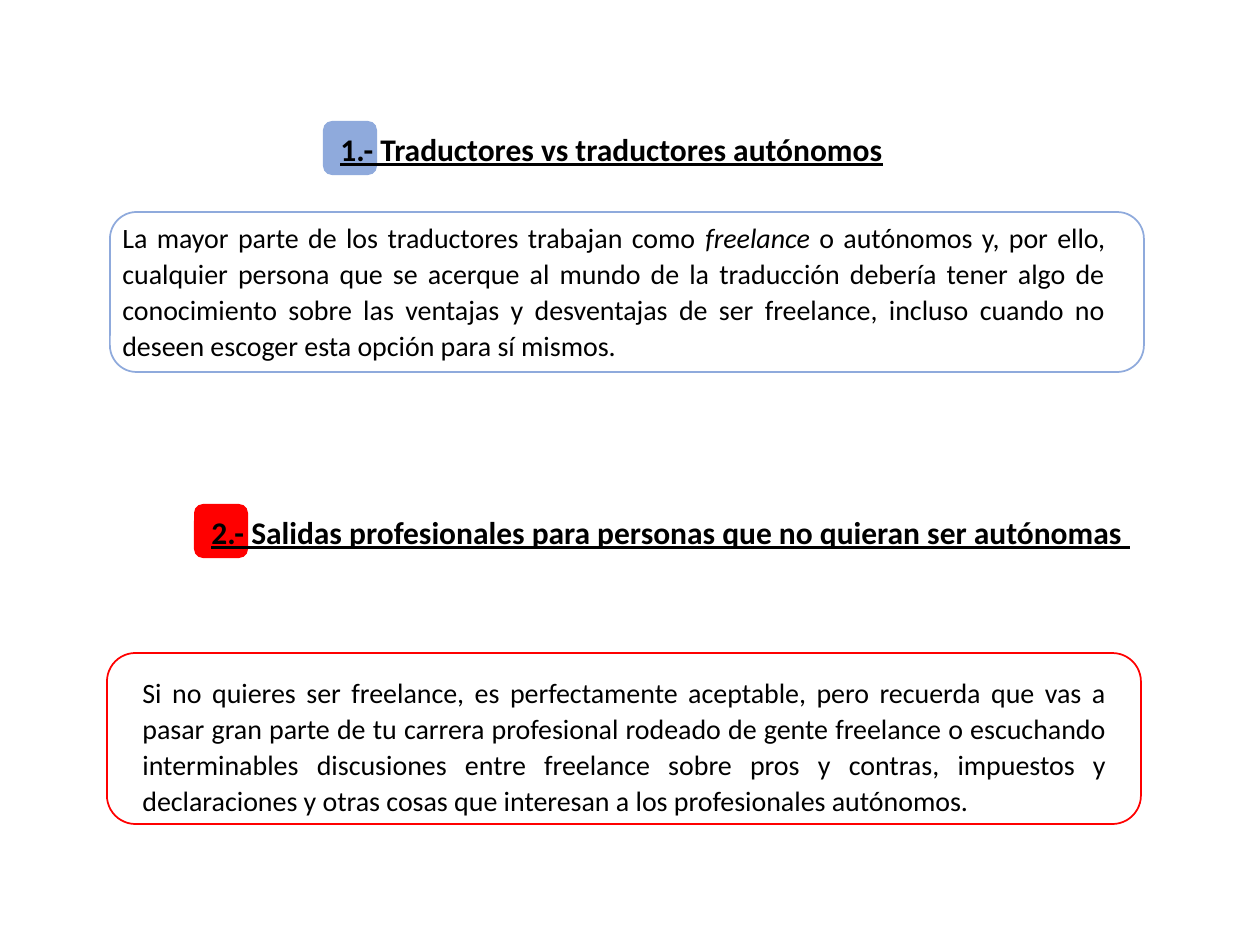
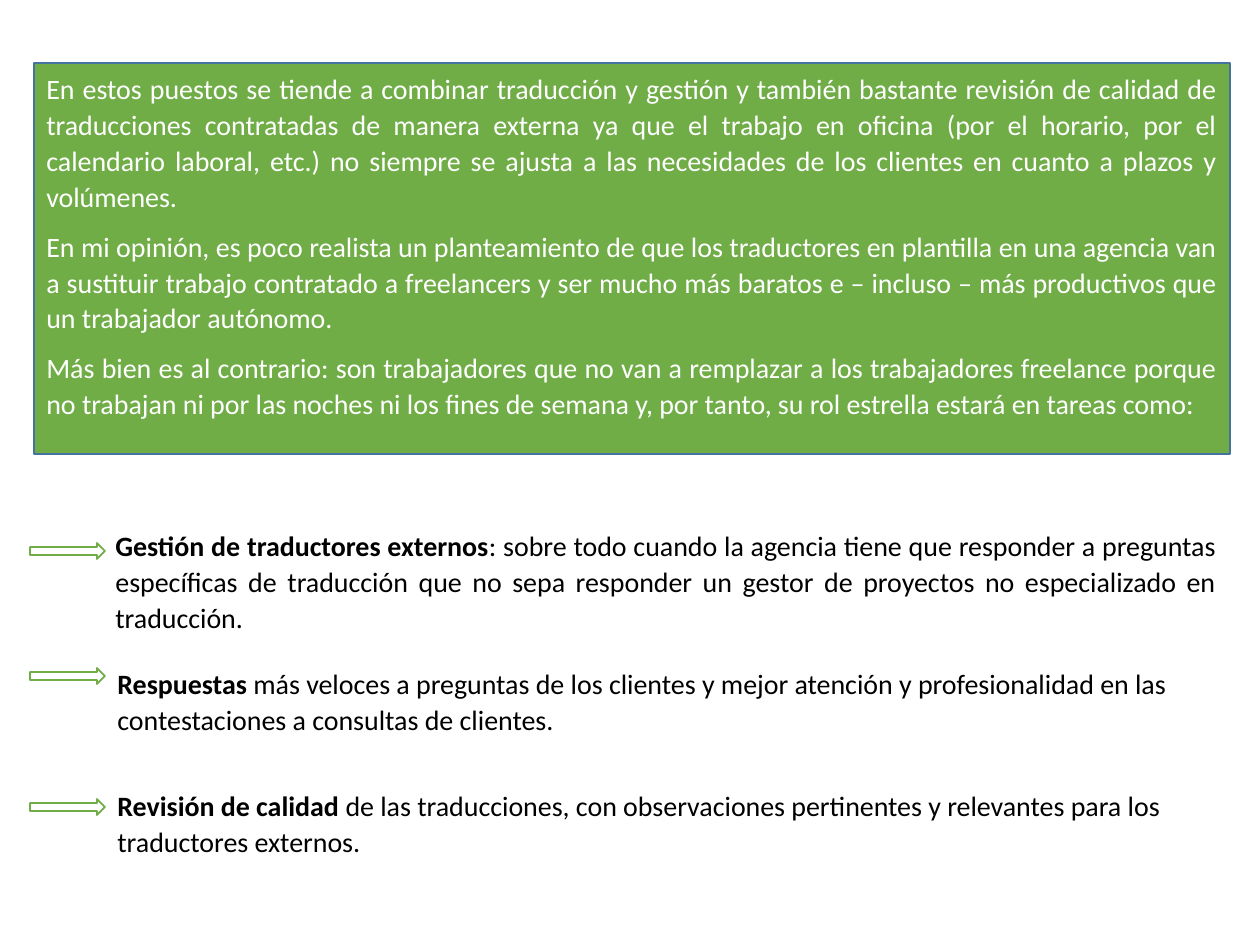
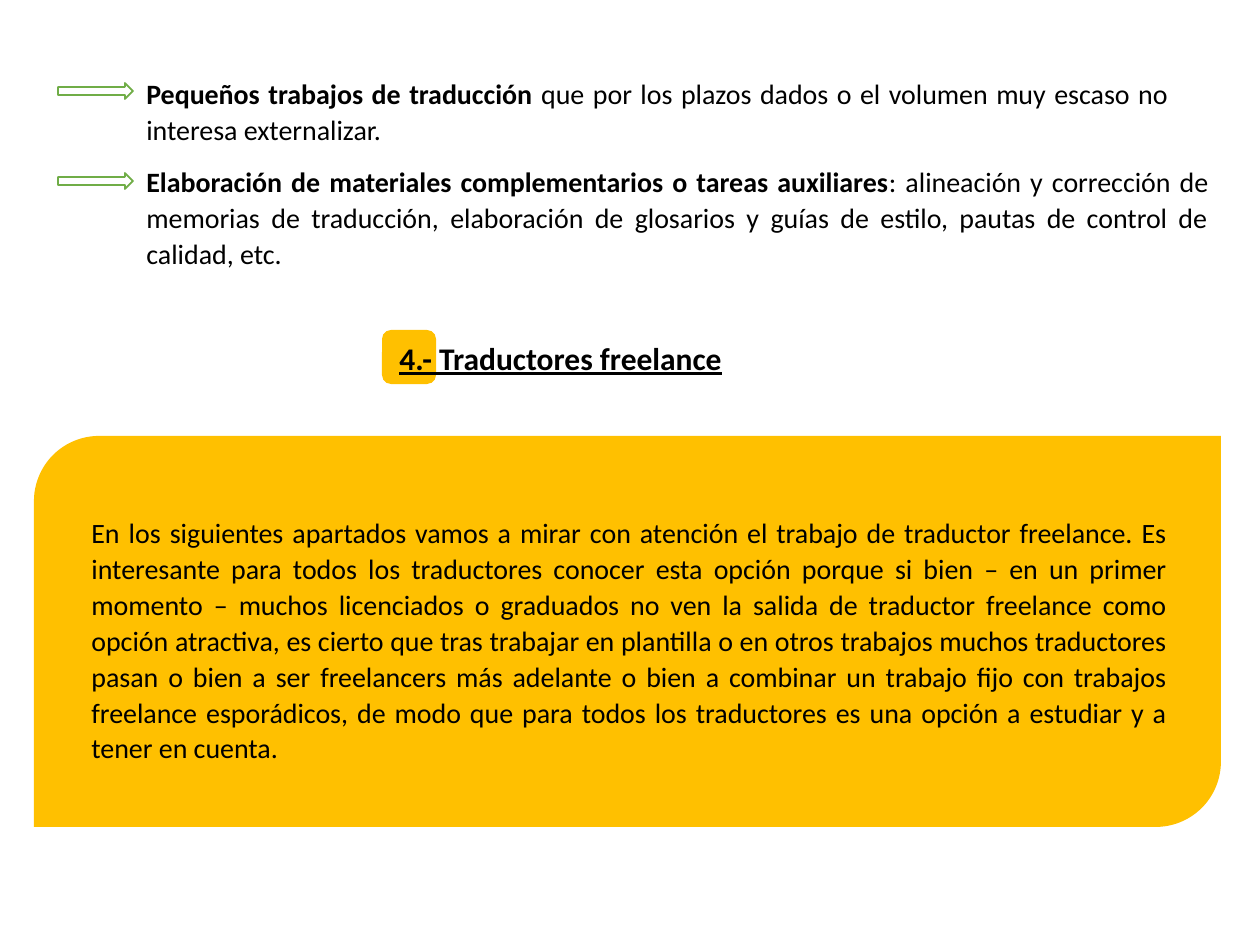
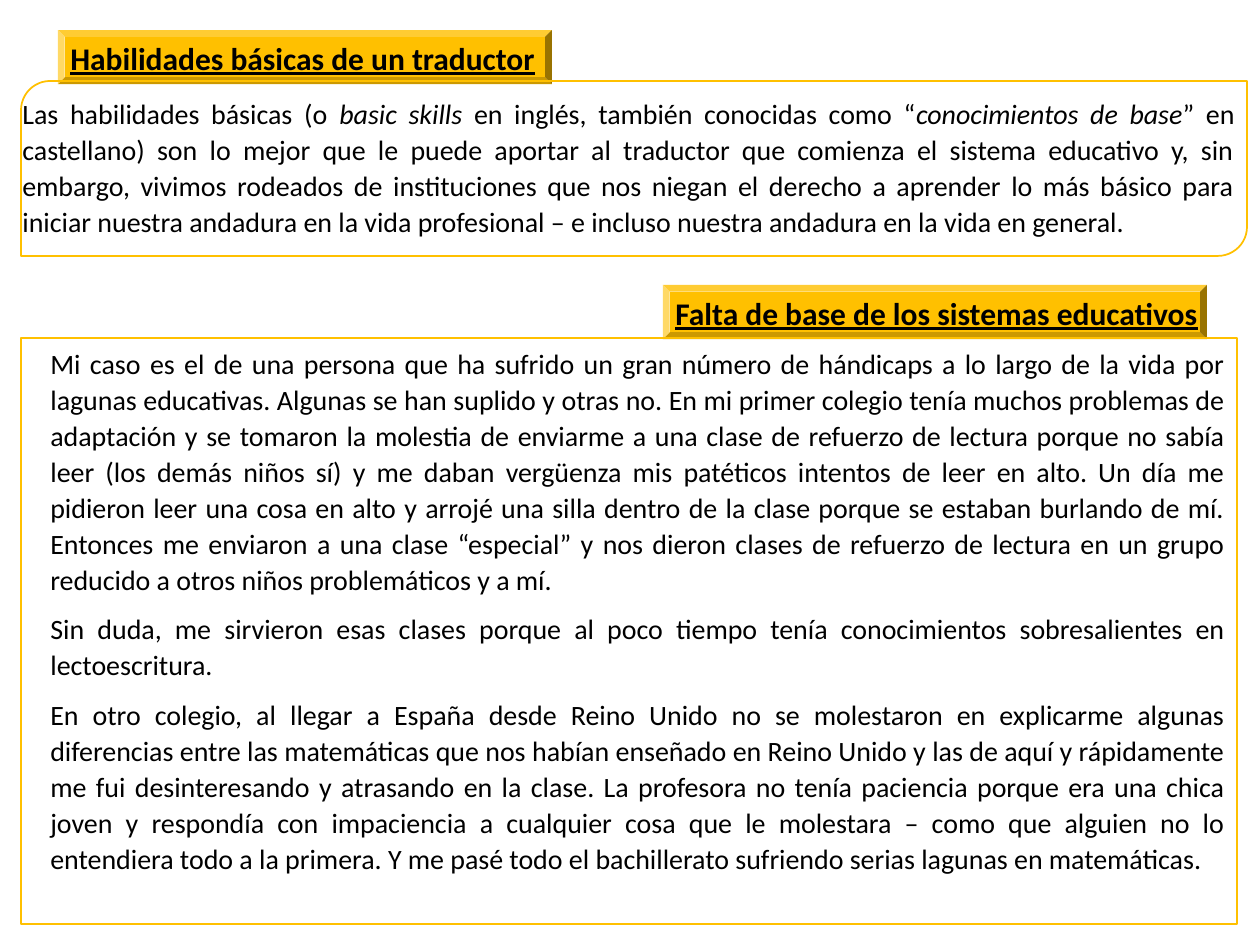
from dataclasses import dataclass

from pptx import Presentation
from pptx.dml.color import RGBColor
from pptx.enum import shapes, text
from pptx.util import Emu, Pt

PX = 914400 / 126
KINDS = shapes.MSO_SHAPE
ALIGN = text.PP_ALIGN


@dataclass(frozen=True)
class Theme:
    font: str = "Calibri"
    title_size: int = 18
    body_size: int = 16
    line_width: int = 1
    line_spacing: float = 1.07
    space_after: int = 8
    ink: str = "000000"
    white: str = "FFFFFF"
    red: str = "FF0000"
    blue: str = "8FAADC"
    green: str = "70AD47"
    edge: str = "43739E"
    gold: str = "FFC000"


T = Theme()
SLIDE_W, SLIDE_H = 1260, 945
BAR_H = 54
ARROW_W, ARROW_H = 75, 16

FREELANCE_MAJORITY = [[
    ("La mayor parte de los traductores trabajan como ", ""),
    ("freelance", "i"),
    (" o autónomos y, por ello, cualquier persona que se acerque al mundo de la traducción "
     "debería tener algo de conocimiento sobre las ventajas y desventajas de ser freelance, "
     "incluso cuando no deseen escoger esta opción para sí mismos.", ""),
]]
NOT_FREELANCE = [
    "Si no quieres ser freelance, es perfectamente aceptable, pero recuerda que vas a pasar "
    "gran parte de tu carrera profesional rodeado de gente freelance o escuchando "
    "interminables discusiones entre freelance sobre pros y contras, impuestos y "
    "declaraciones y otras cosas que interesan a los profesionales autónomos.",
]
AGENCY_ROLES = [
    "En estos puestos se tiende a combinar traducción y gestión y también bastante revisión "
    "de calidad de traducciones contratadas de manera externa ya que el trabajo en oficina "
    "(por el horario, por el calendario laboral, etc.) no siempre se ajusta a las necesidades "
    "de los clientes en cuanto a plazos y volúmenes.",
    "En mi opinión, es poco realista un planteamiento de que los traductores en plantilla en "
    "una agencia van a sustituir trabajo contratado a freelancers y ser mucho más baratos e "
    "– incluso – más productivos que un trabajador autónomo.",
    "Más bien es al contrario: son trabajadores que no van a remplazar a los trabajadores "
    "freelance porque no trabajan ni por las noches ni los fines de semana y, por tanto, su "
    "rol estrella estará en tareas como:",
]
MANAGEMENT = [[
    ("Gestión de traductores externos", "b"),
    (": sobre todo cuando la agencia tiene que responder a preguntas específicas de "
     "traducción que no sepa responder un gestor de proyectos no especializado en "
     "traducción.", ""),
]]
ANSWERS = [[
    ("Respuestas ", "b"),
    ("más veloces a preguntas de los clientes y mejor atención y profesionalidad en las "
     "contestaciones a consultas de clientes.", ""),
]]
REVISION = [[
    ("Revisión de calidad", "b"),
    (" de las traducciones, con observaciones pertinentes y relevantes para los traductores "
     "externos.", ""),
]]
SMALL_JOBS = [[
    ("Pequeños trabajos de traducción", "b"),
    (" que por los plazos dados o el volumen muy escaso no interesa externalizar.", ""),
]]
MATERIALS = [[
    ("Elaboración de materiales complementarios o tareas auxiliares", "b"),
    (": alineación y corrección de memorias de traducción, elaboración de glosarios y guías "
     "de estilo, pautas de control de calidad, etc.", ""),
]]
FREELANCE_OPTION = [
    "En los siguientes apartados vamos a mirar con atención el trabajo de traductor "
    "freelance. Es interesante para todos los traductores conocer esta opción porque si bien "
    "– en un primer momento – muchos licenciados o graduados no ven la salida de traductor "
    "freelance como opción atractiva, es cierto que tras trabajar en plantilla o en otros "
    "trabajos muchos traductores pasan o bien a ser freelancers más adelante o bien a "
    "combinar un trabajo fijo con trabajos freelance esporádicos, de modo que para todos los "
    "traductores es una opción a estudiar y a tener en cuenta.",
]
BASIC_SKILLS = [[
    ("Las habilidades básicas (o ", ""),
    ("basic skills", "i"),
    (" en inglés, también conocidas como “", ""),
    ("conocimientos de base", "i"),
    ("” en castellano) son lo mejor que le puede aportar al traductor que comienza el sistema "
     "educativo y, sin embargo, vivimos rodeados de instituciones que nos niegan el derecho a "
     "aprender lo más básico para iniciar nuestra andadura en la vida profesional – e incluso "
     "nuestra andadura en la vida en general.", ""),
]]
SCHOOL_STORY = [
    "Mi caso es el de una persona que ha sufrido un gran número de hándicaps a lo largo de la "
    "vida por lagunas educativas. Algunas se han suplido y otras no. En mi primer colegio "
    "tenía muchos problemas de adaptación y se tomaron la molestia de enviarme a una clase de "
    "refuerzo de lectura porque no sabía leer (los demás niños sí) y me daban vergüenza mis "
    "patéticos intentos de leer en alto. Un día me pidieron leer una cosa en alto y arrojé "
    "una silla dentro de la clase porque se estaban burlando de mí. Entonces me enviaron a "
    "una clase “especial” y nos dieron clases de refuerzo de lectura en un grupo reducido a "
    "otros niños problemáticos y a mí.",
    "Sin duda, me sirvieron esas clases porque al poco tiempo tenía conocimientos "
    "sobresalientes en lectoescritura.",
    "En otro colegio, al llegar a España desde Reino Unido no se molestaron en explicarme "
    "algunas diferencias entre las matemáticas que nos habían enseñado en Reino Unido y las "
    "de aquí y rápidamente me fui desinteresando y atrasando en la clase. La profesora no "
    "tenía paciencia porque era una chica joven y respondía con impaciencia a cualquier cosa "
    "que le molestara – como que alguien no lo entendiera todo a la primera. Y me pasé todo "
    "el bachillerato sufriendo serias lagunas en matemáticas.",
]


def box(s, kind, at, fill=None, line=None):
    sp = s.shapes.add_shape(kind, *(Emu(round(v * PX)) for v in at))
    sp.shadow.inherit = False
    if fill:
        sp.fill.solid()
        sp.fill.fore_color.rgb = RGBColor.from_string(fill)
    else:
        sp.fill.background()
    if line:
        sp.line.color.rgb = RGBColor.from_string(line)
        sp.line.width = Pt(T.line_width)
    else:
        sp.line.fill.background()


def write(s, paragraphs, at, size=T.body_size, color=T.ink, align=ALIGN.JUSTIFY,
          wrap=True, heading=False):
    tf = s.shapes.add_textbox(*(Emu(round(v * PX)) for v in at)).text_frame
    tf.word_wrap = wrap
    tf.auto_size = text.MSO_AUTO_SIZE.SHAPE_TO_FIT_TEXT
    for i, runs in enumerate(paragraphs):
        p = tf.add_paragraph() if i else tf.paragraphs[0]
        p.alignment = align
        p.line_spacing = T.line_spacing
        p.space_after = Pt(T.space_after)
        p.font.name = T.font
        p.font.size = Pt(size)
        p.font.color.rgb = RGBColor.from_string(color)
        if heading:
            p.font.bold = p.font.underline = True
        for words, style in [(runs, "")] if isinstance(runs, str) else runs:
            r = p.add_run()
            r.text = words
            if style == "b":
                r.font.bold = True
            elif style == "i":
                r.font.italic = True


def title(s, words, x, y, w, wrap=False):
    write(s, [words], (x, y, w, BAR_H), T.title_size, align=ALIGN.LEFT, wrap=wrap, heading=True)


def numbered_title(s, words, x, y, w, color, wrap=False):
    box(s, KINDS.ROUNDED_RECTANGLE, (x, y, BAR_H, BAR_H), color)
    title(s, words, x + 5, y, w, wrap)


def bevel_title(s, words, x, y, bevel_w, text_w):
    box(s, KINDS.BEVEL, (x, y, bevel_w, BAR_H), T.gold)
    title(s, words, x, y, text_w)


def arrow_item(s, paragraphs, arrow_at, at, align=ALIGN.JUSTIFY):
    box(s, KINDS.RIGHT_ARROW, (*arrow_at, ARROW_W, ARROW_H), line=T.green)
    write(s, paragraphs, at, align=align)


def translators(s):
    numbered_title(s, "2.- Salidas profesionales para personas que no quieran ser autónomas ",
                   194, 504, 945, T.red, wrap=True)
    numbered_title(s, "1.- Traductores vs traductores autónomos", 323, 121, 573, T.blue)
    box(s, KINDS.ROUNDED_RECTANGLE, (110, 212, 1034, 160), line=T.blue)
    write(s, FREELANCE_MAJORITY, (110, 212, 1008, 156))
    write(s, NOT_FREELANCE, (130, 667, 989, 156))
    box(s, KINDS.ROUNDED_RECTANGLE, (107, 653, 1034, 171), line=T.red)


def agency_work(s):
    box(s, KINDS.RECTANGLE, (34, 63, 1196, 391), T.green, T.edge)
    write(s, AGENCY_ROLES, (34, 63, 1196, 368), color=T.white)
    arrow_item(s, MANAGEMENT, (30, 543), (103, 520, 1126, 122))
    arrow_item(s, ANSWERS, (30, 668), (105, 658, 1125, 86), ALIGN.LEFT)
    arrow_item(s, REVISION, (30, 799), (105, 780, 1125, 83), ALIGN.LEFT)


def freelancers(s):
    box(s, KINDS.ROUND_2_DIAG_RECTANGLE, (34, 436, 1187, 391), T.gold)
    arrow_item(s, SMALL_JOBS, (58, 83), (134, 68, 1047, 86))
    arrow_item(s, MATERIALS, (58, 173), (134, 156, 1087, 122))
    numbered_title(s, "4.- Traductores freelance", 382, 330, 352, T.gold)
    write(s, FREELANCE_OPTION, (79, 507, 1101, 267))


def basic_skills(s):
    bevel_title(s, "Habilidades básicas de un traductor", 58, 30, 494, 494)
    write(s, BASIC_SKILLS, (10, 88, 1237, 156))
    box(s, KINDS.ROUND_2_DIAG_RECTANGLE, (21, 81, 1226, 175), line=T.gold)
    bevel_title(s, "Falta de base de los sistemas educativos", 663, 285, 544, 552)
    write(s, SCHOOL_STORY, (38, 338, 1200, 586))
    box(s, KINDS.RECTANGLE, (21, 338, 1216, 586), line=T.gold)


def main():
    prs = Presentation()
    prs.slide_width = Emu(round(SLIDE_W * PX))
    prs.slide_height = Emu(round(SLIDE_H * PX))
    for build in (translators, agency_work, freelancers, basic_skills):
        build(prs.slides.add_slide(prs.slide_layouts[6]))
    prs.save("out.pptx")


if __name__ == "__main__":
    main()
